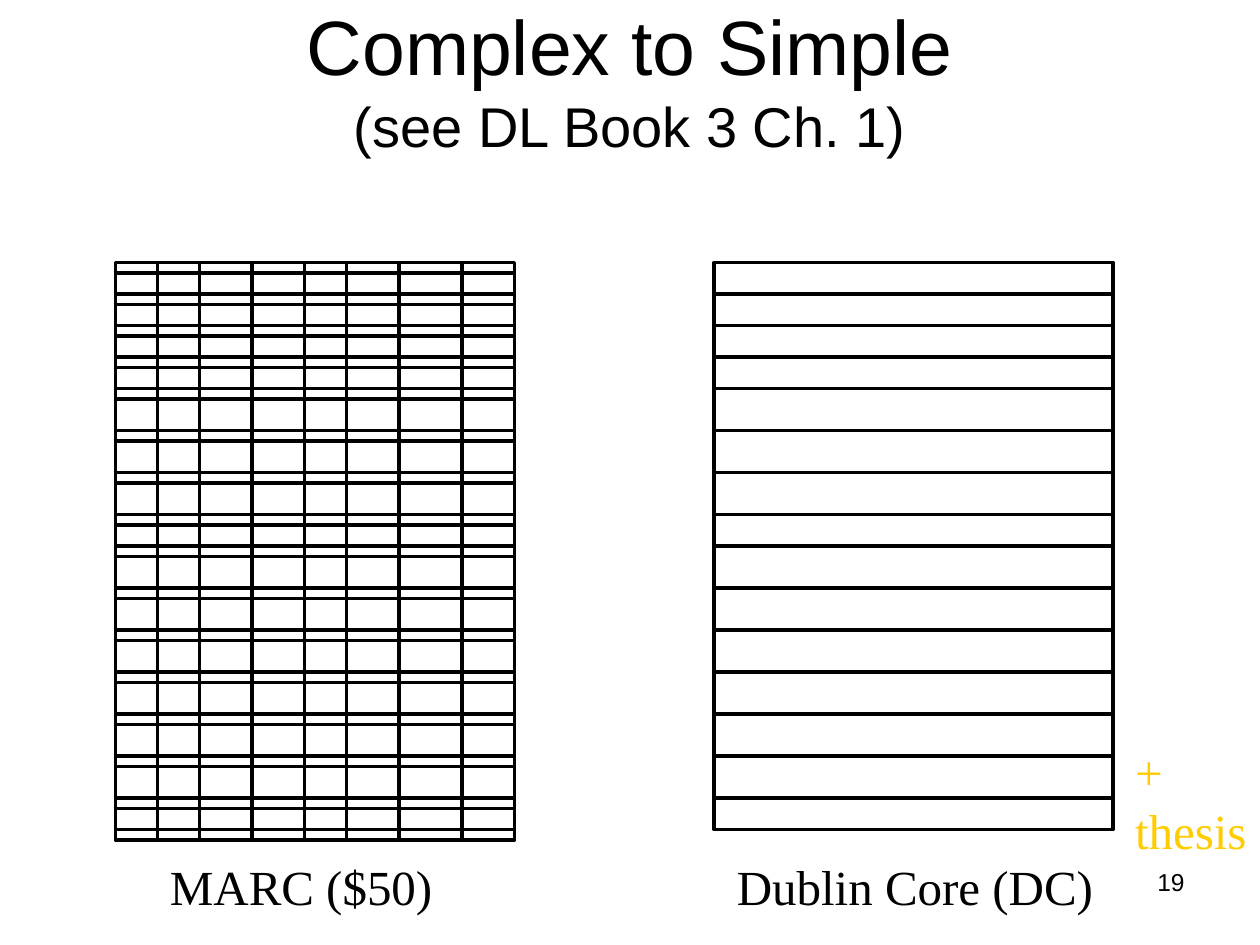
from dataclasses import dataclass

from lxml import etree
from pptx import Presentation
from pptx.dml.color import RGBColor
from pptx.enum import shapes, text
from pptx.oxml import ns
from pptx.util import Pt


@dataclass(frozen=True)
class Theme:
    """Colours, fonts and sizes of the slide."""
    ink: RGBColor = RGBColor(0, 0, 0)
    accent: RGBColor = RGBColor(0xFF, 0xCC, 0)
    sans: str = "Arial"
    serif: str = "Times New Roman"
    title: int = 44
    subtitle: int = 32
    label: int = 28
    number: int = 14
    rule: int = 2


THEME = Theme()
ROWS = (18, 36, 54, 72, 96, 120, 144, 162, 186, 210, 234, 258, 282, 306)
COLUMNS = (24, 48, 78, 108, 132, 162, 198)
RECORD_WIDTH, RECORD_HEIGHT, LAYER_SHIFT = 228, 324, 6


def add_span(para, words, size=THEME.label, font=THEME.serif, color=THEME.ink):
    """Append formatted words to a paragraph."""
    span = para.add_run()
    span.text = words
    span.font.size = Pt(size)
    span.font.name = font
    span.font.color.rgb = color


def add_label(page, box, lines, align=text.PP_ALIGN.LEFT, wrap=False, **style):
    """Add a text box with one paragraph for each line."""
    frame = page.shapes.add_textbox(*map(Pt, box)).text_frame
    frame.word_wrap = wrap
    for index, line in enumerate(lines):
        para = frame.add_paragraph() if index else frame.paragraphs[0]
        para.alignment = align
        add_span(para, line, **style)


def add_rule(page, start, end):
    """Draw a plain straight line between two points."""
    rule = page.shapes.add_connector(
        shapes.MSO_CONNECTOR.STRAIGHT, *map(Pt, start + end))
    rule.line.color.rgb = THEME.ink
    rule.line.width = Pt(THEME.rule)
    etree.SubElement(rule._element.spPr, ns.qn("a:effectLst"))
    return rule


def add_record(page, box):
    """Draw a framed record divided into rows."""
    left, top, width, height = box
    frame = page.shapes.add_shape(shapes.MSO_SHAPE.RECTANGLE, *map(Pt, box))
    frame.shadow.inherit = False
    frame.fill.background()
    frame.line.color.rgb = THEME.ink
    frame.line.width = Pt(THEME.rule)
    for offset in ROWS:
        y = top + offset
        rule = add_rule(page, (left, y), (left + width, y))
        if offset * 2 == height:
            rule.begin_connect(frame, 1)
            rule.end_connect(frame, 3)


def add_title(page, box):
    """Place the title and its smaller second line."""
    title = page.shapes.title
    title.left, title.top, title.width, title.height = map(Pt, box)
    frame = title.text_frame
    frame.auto_size = text.MSO_AUTO_SIZE.NONE
    frame.vertical_anchor = text.MSO_ANCHOR.MIDDLE
    para = frame.paragraphs[0]
    para.alignment = text.PP_ALIGN.CENTER
    add_span(para, "Complex to Simple", size=THEME.title, font=THEME.sans)
    para.add_line_break()
    add_span(para, "(see DL Book 3 Ch. 1)", size=THEME.subtitle, font=THEME.sans)


def add_dublin_core(page, box):
    """Draw the simple record with its caption and extension."""
    left, top, width, height = box
    add_record(page, box)
    add_label(page, (left + 6, top + 336, 218, 41), ["Dublin Core (DC)"])
    add_label(page, (left + 233.5, top + 270, 78.5, 74), ["+", "thesis"],
              color=THEME.accent)


def add_marc(page, box):
    """Draw the complex record as two shifted layers crossed by columns."""
    left, top, width, height = box
    for shift in (0, LAYER_SHIFT):
        add_record(page, (left, top + shift, width, height))
    for offset in COLUMNS:
        x = left + offset
        add_rule(page, (x, top), (x, top + height + LAYER_SHIFT))
    add_label(page, (left + 24, top + 336, 165, 41), ["MARC ($50)"])


def main():
    """Build and save the slide."""
    deck = Presentation()
    deck.slide_width, deck.slide_height = Pt(720), Pt(540)
    page = deck.slides.add_slide(deck.slide_layouts[5])
    add_title(page, (36, 0, 648, 90))
    add_label(page, (516, 492, 168, 37.5), ["19"], align=text.PP_ALIGN.RIGHT,
              wrap=True, size=THEME.number, font=THEME.sans)
    add_dublin_core(page, (408, 150, RECORD_WIDTH, RECORD_HEIGHT))
    add_marc(page, (66, 150, RECORD_WIDTH, RECORD_HEIGHT))
    deck.save("out.pptx")


if __name__ == "__main__":
    main()
